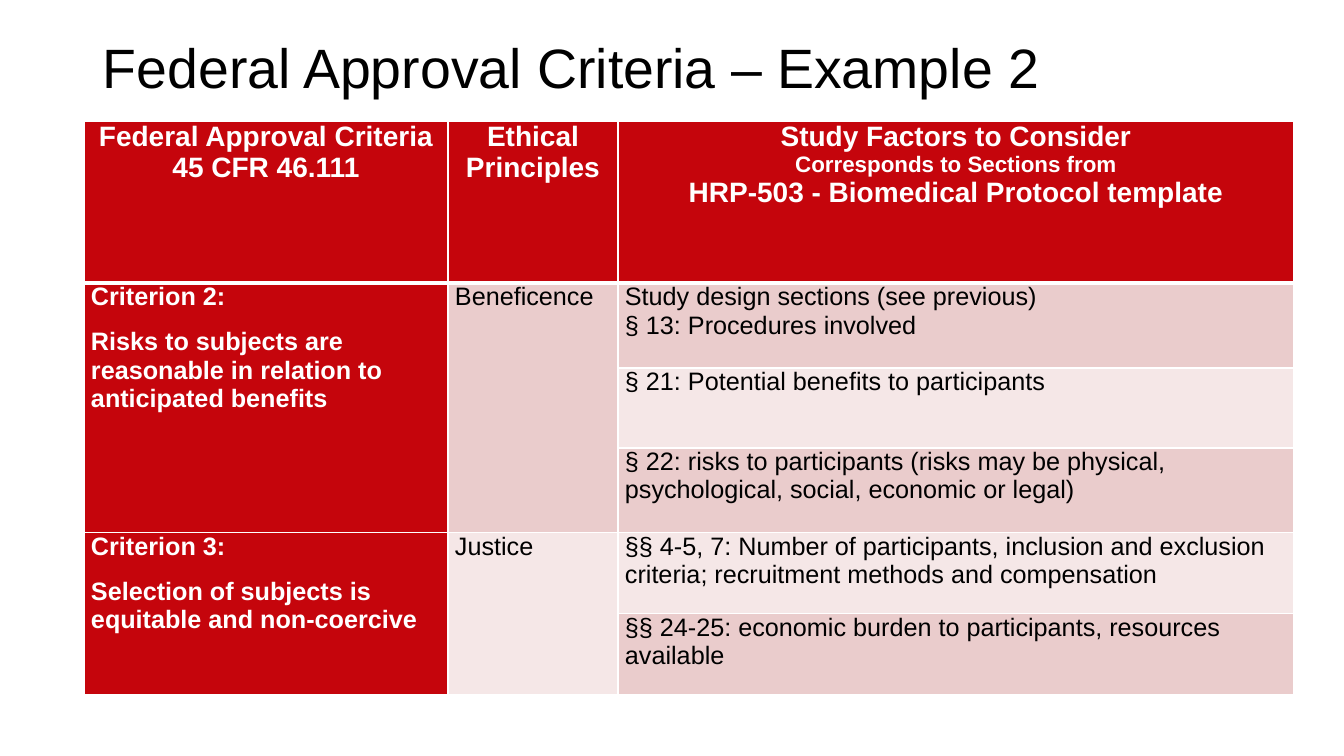
from dataclasses import dataclass

from lxml.etree import SubElement
from pptx import Presentation
from pptx.dml.color import RGBColor
from pptx.enum.text import MSO_ANCHOR, PP_ALIGN
from pptx.oxml.ns import qn
from pptx.slide import Slide
from pptx.table import Table, _Cell
from pptx.util import Emu, Pt

PX_PER_INCH = 100.8
WHITE = RGBColor(0xFF, 0xFF, 0xFF)
BLACK = RGBColor(0x00, 0x00, 0x00)
RED = RGBColor(0xC5, 0x05, 0x0C)
ROSE = RGBColor(0xEA, 0xCC, 0xCC)
PALE_ROSE = RGBColor(0xF5, 0xE7, 0xE7)
FONT = "Arial"
COLUMN_WIDTHS = (364, 170, 676)
ROW_HEIGHTS = (162, 85, 80, 85, 81, 81)
BORDER_SIDES = ("L", "R", "T", "B")


@dataclass(frozen=True)
class Entry:
    """Content and look of one table cell."""

    row: int
    column: int
    lines: tuple[str, ...]
    fill: RGBColor
    row_span: int = 1
    sizes: tuple[int, ...] = (18, 18, 18)
    gap: int = 0


HEADER_SIZES = (20, 16, 20)
ENTRIES = (
    Entry(0, 0, ("Federal Approval Criteria", "45 CFR 46.111"), RED, sizes=(20, 20)),
    Entry(0, 1, ("Ethical Principles",), RED, sizes=HEADER_SIZES),
    Entry(0, 2, ("Study Factors to Consider", "Corresponds to Sections from",
                 "HRP-503 - Biomedical Protocol template"), RED, sizes=HEADER_SIZES),
    Entry(1, 0, ("Criterion 2:", "Risks to subjects are reasonable in relation to "
                 "anticipated benefits"), RED, row_span=3, gap=12),
    Entry(1, 1, ("Beneficence",), ROSE, row_span=3),
    Entry(1, 2, ("Study design sections (see previous)", "§ 13: Procedures involved"), ROSE),
    Entry(2, 2, ("§ 21: Potential benefits to participants",), PALE_ROSE),
    Entry(3, 2, ("§ 22: risks to participants (risks may be physical, psychological, "
                 "social, economic or legal)",), ROSE),
    Entry(4, 0, ("Criterion 3:", "Selection of subjects is equitable and non-coercive"),
          RED, row_span=2, gap=12),
    Entry(4, 1, ("Justice",), PALE_ROSE, row_span=2),
    Entry(4, 2, ("§§ 4-5, 7: Number of participants, inclusion and exclusion criteria; "
                 "recruitment methods and compensation",), PALE_ROSE),
    Entry(5, 2, ("§§ 24-25: economic burden to participants, resources available",), ROSE),
)


def px(length: int) -> Emu:
    """Turn pixels into EMU."""
    return Emu(round(length * 914400 / PX_PER_INCH))


def add_title(slide: Slide, title: str) -> None:
    """Write the slide heading."""
    heading = slide.shapes.add_textbox(px(93), px(35), px(1159), px(71)).text_frame
    heading.word_wrap = True
    heading.vertical_anchor = MSO_ANCHOR.MIDDLE
    heading.text = title
    paragraph = heading.paragraphs[0]
    paragraph.line_spacing = 0.9
    paragraph.font.name = FONT
    paragraph.font.size = Pt(39.6)
    paragraph.font.color.rgb = BLACK


def set_borders(cell: _Cell, row: int) -> None:
    """Draw white cell borders, thicker below the header."""
    properties = cell._tc.get_or_add_tcPr()
    for side in BORDER_SIDES:
        below_header = (row, side) in ((0, "B"), (1, "T"))
        line = SubElement(properties, qn(f"a:ln{side}"), w=str(Pt(3 if below_header else 1)))
        SubElement(SubElement(line, qn("a:solidFill")), qn("a:srgbClr"), val=str(WHITE))


def fill_entry(table: Table, entry: Entry) -> None:
    """Write and style one table entry."""
    last_row = entry.row + entry.row_span - 1
    cell = table.cell(entry.row, entry.column)
    for row in range(entry.row, last_row + 1):
        part = table.cell(row, entry.column)
        set_borders(part, row)
        part.fill.solid()
        part.fill.fore_color.rgb = entry.fill
    if entry.row_span > 1:
        cell.merge(table.cell(last_row, entry.column))
    cell.margin_left = cell.margin_right = px(7)
    cell.margin_top = cell.margin_bottom = 0
    cell.text_frame.text = "\n".join(entry.lines)
    for index, (paragraph, size) in enumerate(zip(cell.text_frame.paragraphs, entry.sizes)):
        paragraph.alignment = PP_ALIGN.CENTER if entry.row == 0 else PP_ALIGN.LEFT
        if index and entry.gap:
            paragraph.space_before = Pt(entry.gap)
        for run in paragraph.runs:
            run.font.name = FONT
            run.font.size = Pt(size)
            run.font.bold = entry.fill == RED
            run.font.color.rgb = WHITE if entry.fill == RED else BLACK


def add_criteria(slide: Slide) -> None:
    """Build the table of approval criteria."""
    table = slide.shapes.add_table(
        len(ROW_HEIGHTS), len(COLUMN_WIDTHS), px(84), px(121),
        px(sum(COLUMN_WIDTHS)), px(sum(ROW_HEIGHTS)),
    ).table
    for column, width in zip(table.columns, COLUMN_WIDTHS):
        column.width = px(width)
    for row, height in zip(table.rows, ROW_HEIGHTS):
        row.height = px(height)
    for entry in ENTRIES:
        fill_entry(table, entry)


def main() -> None:
    """Build and save the slide."""
    presentation = Presentation()
    presentation.slide_width = px(1344)
    presentation.slide_height = px(756)
    slide = presentation.slides.add_slide(presentation.slide_layouts[6])
    add_title(slide, "Federal Approval Criteria – Example 2")
    add_criteria(slide)
    presentation.save("out.pptx")


if __name__ == "__main__":
    main()
